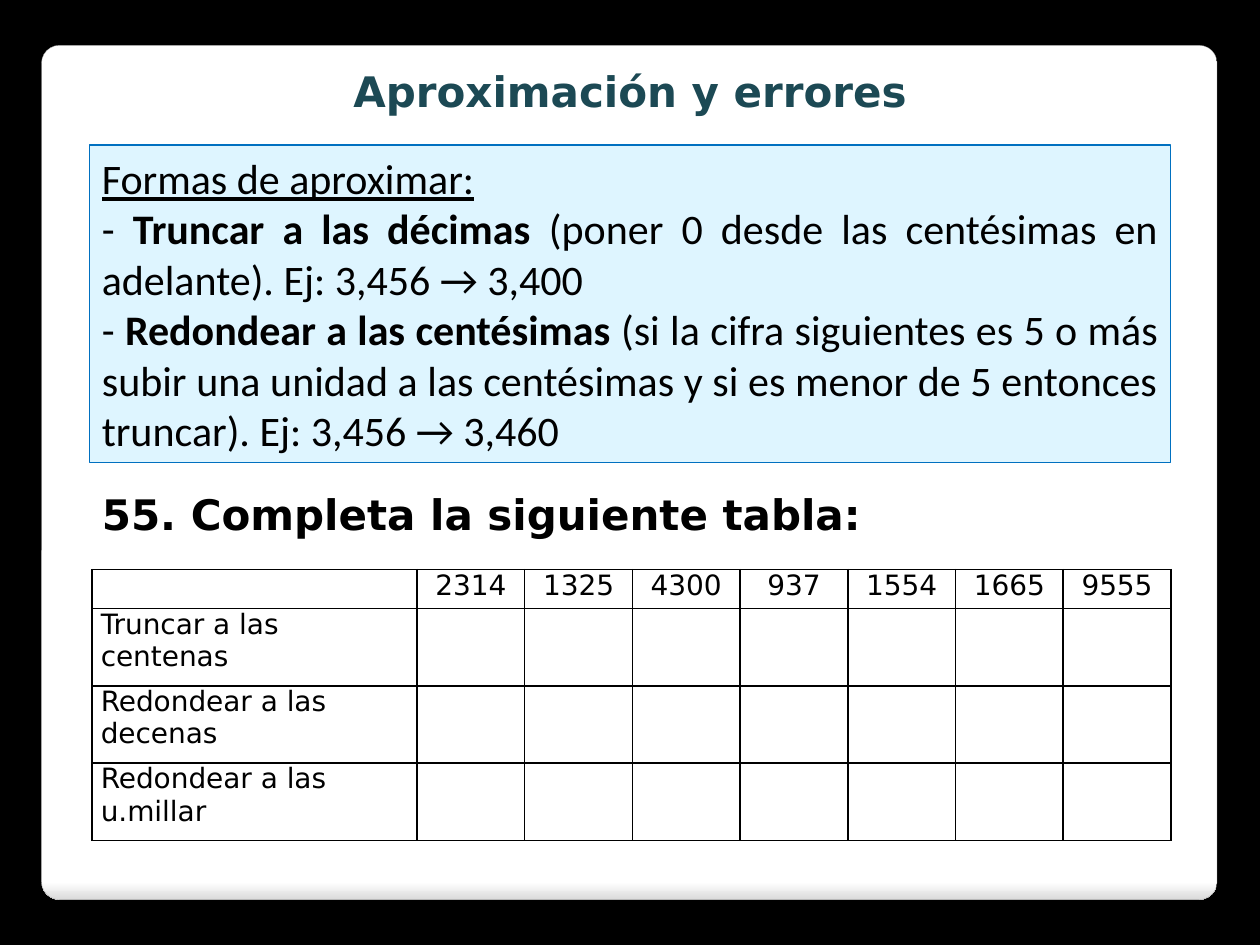
from pptx import Presentation
from pptx.dml.color import RGBColor
from pptx.enum.shapes import MSO_SHAPE
from pptx.enum.text import MSO_ANCHOR, MSO_AUTO_SIZE, PP_ALIGN
from pptx.oxml.ns import qn
from pptx.util import Inches, Pt
from lxml.etree import SubElement

BLACK = RGBColor(0x00, 0x00, 0x00)
WHITE = RGBColor(0xFF, 0xFF, 0xFF)
PANEL_EDGE = RGBColor(0xDA, 0xDA, 0xDA)
PANEL_LINE = RGBColor(0xA4, 0xA4, 0xA4)
TEAL = RGBColor(0x1C, 0x49, 0x54)
PALE_BLUE = RGBColor(0xDE, 0xF5, 0xFF)
BLUE = RGBColor(0x00, 0x70, 0xC0)

HEADING = {"name": "DejaVu Sans", "size": Pt(24), "bold": True}
RULE = {"name": "Calibri", "size": Pt(24)}
CELL = {"name": "DejaVu Sans", "size": Pt(16), "bold": False}

# Each rule is a list of (words, extra format) runs
RULES = [
    [("Formas de aproximar:", {"underline": True})],
    [("- ", {}), ("Truncar a las décimas", {"bold": True}),
     (" (poner 0 desde las centésimas en adelante). Ej: 3,456 → 3,400", {})],
    [("-", {}), (" Redondear a las centésimas ", {"bold": True}),
     ("(si la cifra siguientes es 5 o más subir una unidad a las centésimas "
      "y si es menor de 5 entonces truncar). Ej: 3,456 → 3,460", {})],
]
NUMBERS = ["2314", "1325", "4300", "937", "1554", "1665", "9555"]
TASKS = ["Truncar a las centenas", "Redondear a las decenas",
         "Redondear a las u.millar"]


def box(left, top, width, height):
    return [Inches(value) for value in (left, top, width, height)]


def add_run(paragraph, words, style, color=BLACK):
    run = paragraph.add_run()
    run.text = words
    for key, value in style.items():
        setattr(run.font, key, value)
    run.font.color.rgb = color


def set_frame(shape, anchor=MSO_ANCHOR.TOP):
    frame = shape.text_frame
    settings = {
        "word_wrap": True, "auto_size": MSO_AUTO_SIZE.SHAPE_TO_FIT_TEXT,
        "vertical_anchor": anchor,
        "margin_left": Inches(0.1), "margin_right": Inches(0.1),
        "margin_top": Inches(0.05), "margin_bottom": Inches(0.05),
    }
    for key, value in settings.items():
        setattr(frame, key, value)
    return frame


def add_panel(slide):
    panel = slide.shapes.add_shape(MSO_SHAPE.ROUNDED_RECTANGLE,
                                   *box(0.33, 0.36, 9.33, 6.78))
    panel.adjustments[0] = 0.021
    panel.shadow.inherit = False
    panel.fill.gradient()
    panel.fill.gradient_angle = 270
    stops = panel.fill.gradient_stops
    for stop, color, position in zip(stops, (WHITE, PANEL_EDGE), (0.98, 1)):
        stop.color.rgb = color
        stop.position = position
    panel.line.color.rgb = PANEL_LINE
    panel.line.width = Pt(0.16)
    # Behind the title placeholder
    slide.shapes.element.insert(2, panel.element)


def set_title(slide, words):
    title = slide.shapes.title
    title.left, title.top, title.width, title.height = box(0.39, 0.47, 9.22, 0.5)
    paragraph = set_frame(title).paragraphs[0]
    paragraph.alignment = PP_ALIGN.CENTER
    add_run(paragraph, words, HEADING, TEAL)


def add_rules(slide):
    rules = slide.shapes.add_shape(MSO_SHAPE.RECTANGLE,
                                   *box(0.71, 1.15, 8.58, 2.52))
    rules.shadow.inherit = False
    rules.fill.solid()
    rules.fill.fore_color.rgb = PALE_BLUE
    rules.line.color.rgb = BLUE
    rules.line.width = Pt(0.75)
    frame = set_frame(rules, MSO_ANCHOR.MIDDLE)
    for index, runs in enumerate(RULES):
        paragraph = frame.add_paragraph() if index else frame.paragraphs[0]
        paragraph.alignment = PP_ALIGN.JUSTIFY if index else PP_ALIGN.LEFT
        for words, extra in runs:
            add_run(paragraph, words, {**RULE, **extra})
    paragraph.space_after = Pt(3)


def add_exercise(slide, words):
    exercise = slide.shapes.add_textbox(*box(0.71, 3.83, 7.28, 0.5))
    add_run(set_frame(exercise).paragraphs[0], words, HEADING)


def set_borders(cell):
    properties = cell._tc.get_or_add_tcPr()
    for position, side in enumerate(("lnL", "lnR", "lnT", "lnB")):
        line = SubElement(properties, qn(f"a:{side}"), w=str(Pt(1)))
        fill = SubElement(line, qn("a:solidFill"))
        SubElement(fill, qn("a:srgbClr"), val=str(BLACK))
        # Borders come before the cell fill
        properties.insert(position, line)


def add_answer_table(slide):
    rows = [["", *NUMBERS]] + [[task] + [""] * len(NUMBERS) for task in TASKS]
    table = slide.shapes.add_table(len(rows), len(rows[0]),
                                   *box(0.73, 4.52, 8.57, 2.15)).table
    table.first_row = table.horz_banding = False
    for index, column in enumerate(table.columns):
        column.width = Inches(0.855 if index else 2.58)
    for index, row in enumerate(table.rows):
        row.height = Inches(0.613 if index else 0.31)
    for row, texts in enumerate(rows):
        for column, words in enumerate(texts):
            cell = table.cell(row, column)
            cell.margin_left = cell.margin_right = Inches(0.07)
            cell.margin_top = cell.margin_bottom = 0
            cell.fill.background()
            set_borders(cell)
            paragraph = cell.text_frame.paragraphs[0]
            paragraph.alignment = PP_ALIGN.CENTER if column else PP_ALIGN.LEFT
            if words:
                add_run(paragraph, words, CELL)


def main():
    deck = Presentation()
    deck.slide_width, deck.slide_height = Inches(10), Inches(7.5)
    slide = deck.slides.add_slide(deck.slide_layouts[5])
    slide.background.fill.solid()
    slide.background.fill.fore_color.rgb = BLACK

    add_panel(slide)
    set_title(slide, "Aproximación y errores")
    add_rules(slide)
    add_exercise(slide, "55. Completa la siguiente tabla:")
    add_answer_table(slide)
    deck.save("out.pptx")


if __name__ == "__main__":
    main()
